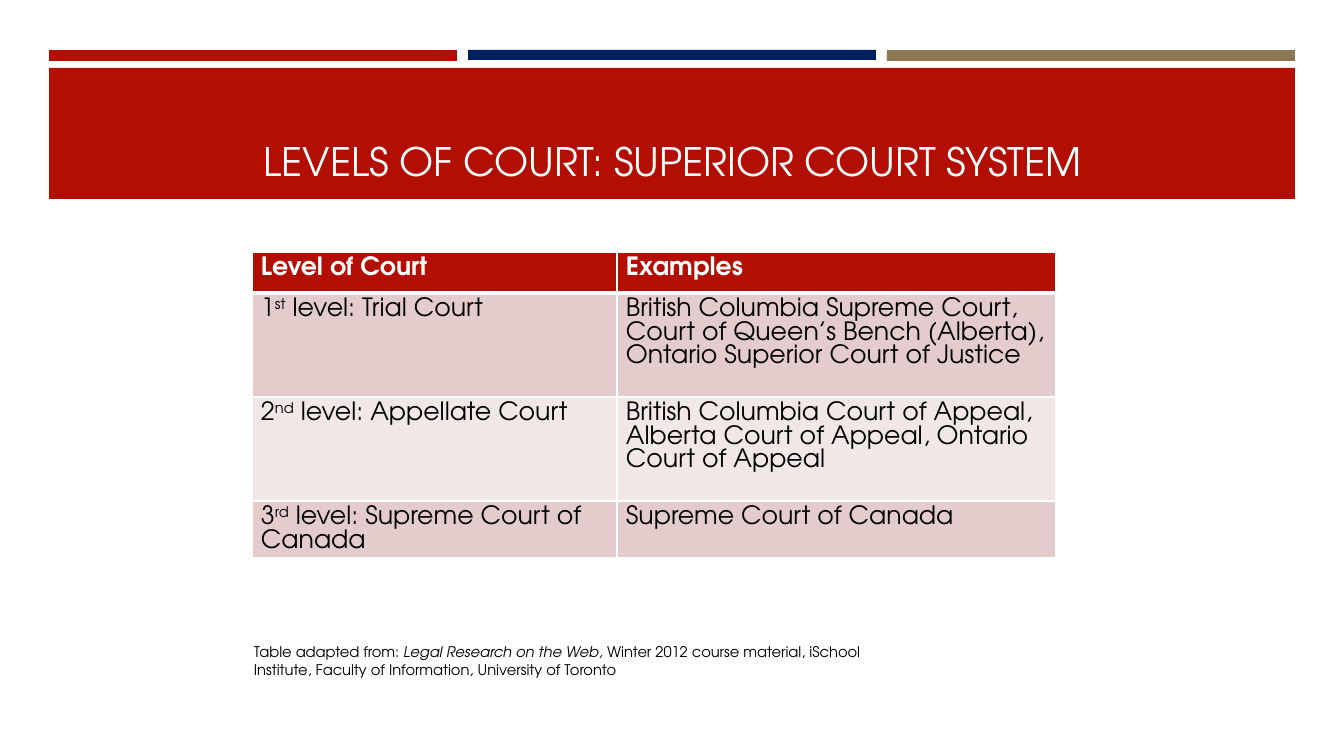
from lxml.etree import SubElement
from pptx import Presentation
from pptx.dml.color import RGBColor
from pptx.enum.shapes import MSO_SHAPE
from pptx.enum.text import MSO_ANCHOR, MSO_AUTO_SIZE, PP_ALIGN
from pptx.oxml.ns import qn
from pptx.util import Pt

PX = 914400 / 100.8
RED, NAVY, TAN, WHITE, BLACK = "B20F02", "002060", "8D7654", "FFFFFF", "000000"


def paint(target, color):
    if hasattr(target, "solid"):
        target.solid()
        target = target.fore_color
    target.rgb = RGBColor.from_string(color)


def write(para, text, color, **formats):
    span = para.add_run()
    span.text = text
    paint(span.font.fill, color)
    for name, value in {"name": "TeX Gyre Adventor", **formats}.items():
        setattr(span.font, name, value)
    return span


deck = Presentation()
deck.slide_width = round(1344 * PX)
deck.slide_height = round(756 * PX)
page = deck.slides.add_slide(deck.slide_layouts[5])

bands = [
    (49, 50, 408, 11, RED),
    (468, 50, 408, 10, NAVY),
    (887, 50, 408, 11, TAN),
    (49, 68, 1246, 131, RED),
]
for *place, color in bands:
    band = page.shapes.add_shape(MSO_SHAPE.RECTANGLE, *[round(length * PX) for length in place])
    band.shadow.inherit = False
    paint(band.fill, color)
    band.line.fill.background()

title = page.shapes.title
title.element.getparent().append(title.element)
for name, length in {"left": 65, "top": 77, "width": 1215, "height": 112}.items():
    setattr(title, name, round(length * PX))
paint(title.line.fill, RED)
title.line.width = Pt(0.75)
title.text_frame.vertical_anchor = MSO_ANCHOR.BOTTOM
title_para = title.text_frame.paragraphs[0]
title_para.alignment = PP_ALIGN.CENTER
write(title_para, "LEVELS OF COURT: SUPERIOR COURT SYSTEM", WHITE, size=Pt(28))

rows = [
    (41, RED, [["Level of Court"], ["Examples"]]),
    (104, "E4CCCC", [
        ["1", "st", " level: Trial Court"],
        ["British Columbia Supreme Court, Court of Queen’s Bench (Alberta), "
         "Ontario Superior Court of Justice"],
    ]),
    (104, "F2E7E7", [
        ["2", "nd", " level: Appellate Court"],
        ["British Columbia Court of Appeal, Alberta Court of Appeal, Ontario Court of Appeal"],
    ]),
    (57, "E4CCCC", [
        ["3", "rd", " level: Supreme Court of Canada"],
        ["Supreme Court of Canada"],
    ]),
]
place = [round(length * PX) for length in (252, 252, 804, 306)]
table = page.shapes.add_table(len(rows), 2, *place).table
table.horz_banding = False
table.first_row = True
for column, width in zip(table.columns, (365, 439)):
    column.width = round(width * PX)

for row_index, (height, color, texts) in enumerate(rows):
    header = row_index == 0
    table.rows[row_index].height = round(height * PX)
    for column_index, parts in enumerate(texts):
        cell = table.cell(row_index, column_index)
        margins = {"margin_left": 9, "margin_right": 9, "margin_top": 5, "margin_bottom": 5}
        for name, length in margins.items():
            setattr(cell, name, round(length * PX))
        para = cell.text_frame.paragraphs[0]
        for part_index, part in enumerate(parts):
            span = write(para, part, WHITE if header else BLACK, size=Pt(18), bold=header)
            if part_index == 1:
                span.font._element.set("baseline", "30000")
        properties = cell._tc.get_or_add_tcPr()
        for side in ("lnL", "lnR", "lnT", "lnB"):
            thick = (row_index, side) in ((0, "lnB"), (1, "lnT"))
            border = SubElement(properties, qn(f"a:{side}"), w=str(Pt(3 if thick else 1)))
            fill = SubElement(border, qn("a:solidFill"))
            SubElement(fill, qn("a:srgbClr"), val=WHITE)
        paint(cell.fill, color)

box = page.shapes.add_textbox(*[round(length * PX) for length in (244, 638, 655, 45)])
box.text_frame.word_wrap = True
box.text_frame.auto_size = MSO_AUTO_SIZE.SHAPE_TO_FIT_TEXT
credit = [
    ("Table adapted from: ", False),
    ("Legal Research on the Web, ", True),
    ("Winter 2012 course material, iSchool Institute, Faculty of Information, "
     "University of Toronto", False),
]
for text, italic in credit:
    write(box.text_frame.paragraphs[0], text, BLACK, size=Pt(10.5), italic=italic)

deck.save("out.pptx")
